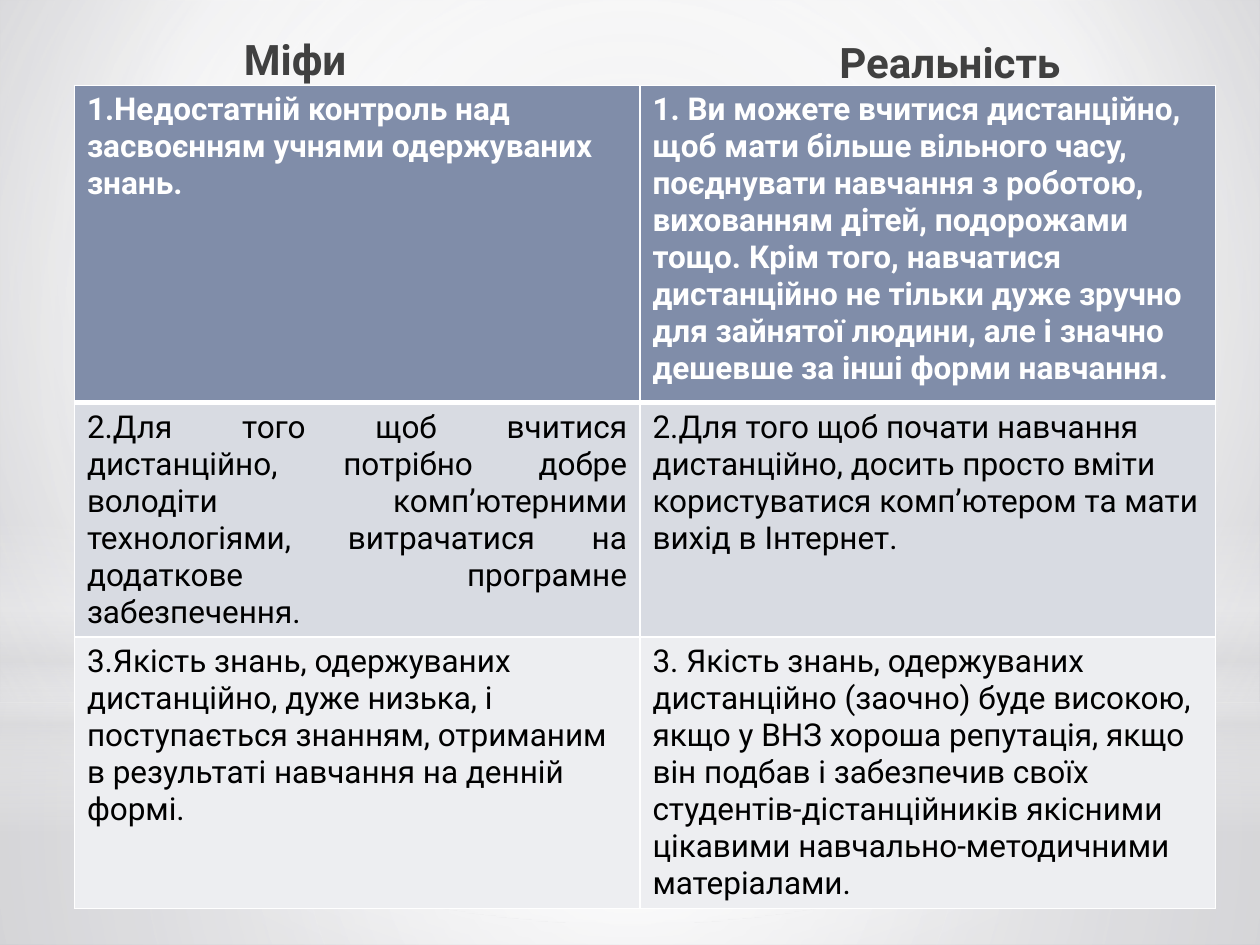
from lxml.etree import SubElement
from pptx import Presentation
from pptx.dml.color import RGBColor
from pptx.enum.shapes import MSO_SHAPE
from pptx.enum.text import MSO_ANCHOR, PP_ALIGN
from pptx.oxml.ns import qn
from pptx.util import Cm, Pt


def color(code):
    """Turn a hex string into a colour."""
    return RGBColor.from_string(code)


def write(frame, text, size=18, bold=False, ink="000000", align=PP_ALIGN.LEFT, after=0):
    """Put formatted text into a frame."""
    frame.word_wrap = True
    par = frame.paragraphs[0]
    par.alignment = align
    par.space_before, par.space_after = Pt(0), Pt(after)
    run = par.add_run()
    run.text = text
    font = run.font
    font.name, font.size, font.bold = "Roboto", Pt(size), bold
    font.color.rgb = color(ink)


def blend(solid, stops, focus=None):
    """Replace a solid fill by a gradient, round when a focus is given."""
    grad = solid.makeelement(qn("a:gradFill"), {"rotWithShape": "1"})
    items = SubElement(grad, qn("a:gsLst"))
    for place, code, alpha in stops:
        stop = SubElement(items, qn("a:gs"), pos=str(place * 1000))
        tone = SubElement(stop, qn("a:srgbClr"), val=code)
        if alpha < 100:
            SubElement(tone, qn("a:alpha"), val=str(alpha * 1000))
    if focus:
        way = SubElement(grad, qn("a:path"), {"path": "circle"})
        sides = {side: str(part * 1000) for side, part in zip("ltrb", focus)}
        SubElement(way, qn("a:fillToRect"), sides)
    else:
        SubElement(grad, qn("a:lin"), ang="5400000", scaled="0")
    solid.getparent().replace(solid, grad)


def edge(cell, **widths):
    """Draw white cell borders with the given widths in points."""
    props = cell._tc.get_or_add_tcPr()
    for spot, (side, width) in enumerate(widths.items()):
        line = props.makeelement(qn(f"a:ln{side}"), {"w": str(Pt(width))})
        fill = SubElement(line, qn("a:solidFill"))
        SubElement(fill, qn("a:srgbClr"), val="FFFFFF")
        props.insert(spot, line)


class Deck:
    """Holds the style and the current slide."""

    MID = (50, 50, 50, 50)
    FILLS = ("808DA9", "D8DBE2", "EDEEF1")

    def __init__(self):
        """Start a deck with one comparison slide."""
        self.file = Presentation()
        self.file.slide_width, self.file.slide_height = Cm(25.4), Cm(19.05)
        self.slide = self.file.slides.add_slide(self.file.slide_layouts[4])
        self.heads = []
        for holder in list(self.slide.placeholders):
            if holder.placeholder_format.idx in (1, 3):
                self.heads.append(holder)
            else:
                holder.element.getparent().remove(holder.element)

    def back(self, stops, focus):
        """Fill the background with a round gradient."""
        self.slide.background.fill.solid()
        blend(next(self.slide.element.iter(qn("a:solidFill"))), stops, focus)

    def glow(self, kind, top, height, stops, focus=None):
        """Add a full-width translucent shape."""
        shape = self.slide.shapes.add_shape(kind, 0, Cm(top), Cm(25.4), Cm(height))
        shape.shadow.inherit = False
        shape.line.fill.background()
        shape.fill.solid()
        blend(shape.element.spPr.find(qn("a:solidFill")), stops, focus)

    def head(self, text, left, top):
        """Place the next column heading in front."""
        holder = self.heads.pop(0)
        self.slide.shapes.element.append(holder.element)
        holder.left, holder.top = Cm(left), Cm(top)
        holder.width, holder.height = Cm(9.3), Cm(1.78)
        frame = holder.text_frame
        frame.vertical_anchor = MSO_ANCHOR.BOTTOM
        write(frame, text, size=24, bold=True, ink="404040", align=PP_ALIGN.CENTER, after=3)

    def table(self, rows, left, top, widths, heights):
        """Add the table with a strong first row."""
        frame = self.slide.shapes.add_table(
            len(rows), len(widths), Cm(left), Cm(top), Cm(sum(widths)), Cm(sum(heights)))
        grid = frame.table
        for col, width in zip(grid.columns, widths):
            col.width = Cm(width)
        for r, texts in enumerate(rows):
            grid.rows[r].height = Cm(heights[r])
            for c, text in enumerate(texts):
                cell = grid.cell(r, c)
                cell.fill.solid()
                cell.fill.fore_color.rgb = color(self.FILLS[r])
                edge(cell, L=1, R=1, T=3 if r == 1 else 1, B=1 if r else 3)
                write(cell.text_frame, text, bold=r == 0,
                      ink="000000" if r else "FFFFFF",
                      align=PP_ALIGN.JUSTIFY if (r, c) == (1, 0) else PP_ALIGN.LEFT)


ROWS = [
    ("1.Недостатній контроль над засвоєнням учнями одержуваних знань.",
     "1. Ви можете вчитися дистанційно, щоб мати більше вільного часу, поєднувати "
     "навчання з роботою, вихованням дітей, подорожами тощо. Крім того, навчатися "
     "дистанційно не тільки дуже зручно для зайнятої людини, але і значно дешевше "
     "за інші форми навчання."),
    ("2.Для того щоб вчитися дистанційно, потрібно добре володіти комп’ютерними "
     "технологіями, витрачатися на додаткове програмне забезпечення.",
     "2.Для того щоб почати навчання дистанційно, досить просто вміти користуватися "
     "комп’ютером та мати вихід в Інтернет."),
    ("3.Якість знань, одержуваних дистанційно, дуже низька, і поступається знанням, "
     "отриманим в результаті навчання на денній формі.",
     "3. Якість знань, одержуваних дистанційно (заочно) буде високою, якщо у ВНЗ "
     "хороша репутація, якщо він подбав і забезпечив своїх студентів-дістанційників "
     "якісними цікавими навчально-методичними матеріалами."),
]


def main():
    """Build and save the slide."""
    deck = Deck()
    box = MSO_SHAPE.RECTANGLE
    deck.back([(0, "D4D4D7", 100), (60, "FFFFFF", 100), (100, "B0B0B7", 100)],
              (20, 10, 20, 60))
    deck.glow(box, 14.17, 4.88,
              [(0, "FFFFFF", 91), (37, "FFFFFF", 76), (100, "DEDEE0", 79)], deck.MID)
    deck.glow(box, 0, 14.17,
              [(0, "FFFFFF", 89), (48, "FFFFFF", 62), (100, "DEDEE0", 79)], deck.MID)
    deck.glow(box, 10.46, 6.35,
              [(0, "FFFFFF", 0), (29, "FFFFFF", 30), (45, "DEDEE0", 40),
               (55, "FFFFFF", 26), (65, "DEDEE0", 60), (100, "FFFFFF", 0)])
    deck.glow(MSO_SHAPE.OVAL, 4.45, 14.17,
              [(0, "FFFFFF", 100), (56, "FFFFFF", 0)], deck.MID)
    deck.head("Міфи", 1.3, 0.03)
    deck.head("Реальність", 14.5, 0.1)
    deck.table(ROWS, 1.5, 1.72, (11.4, 11.6), (6.4, 4.72, 5.46))
    deck.file.save("out.pptx")


if __name__ == "__main__":
    main()
